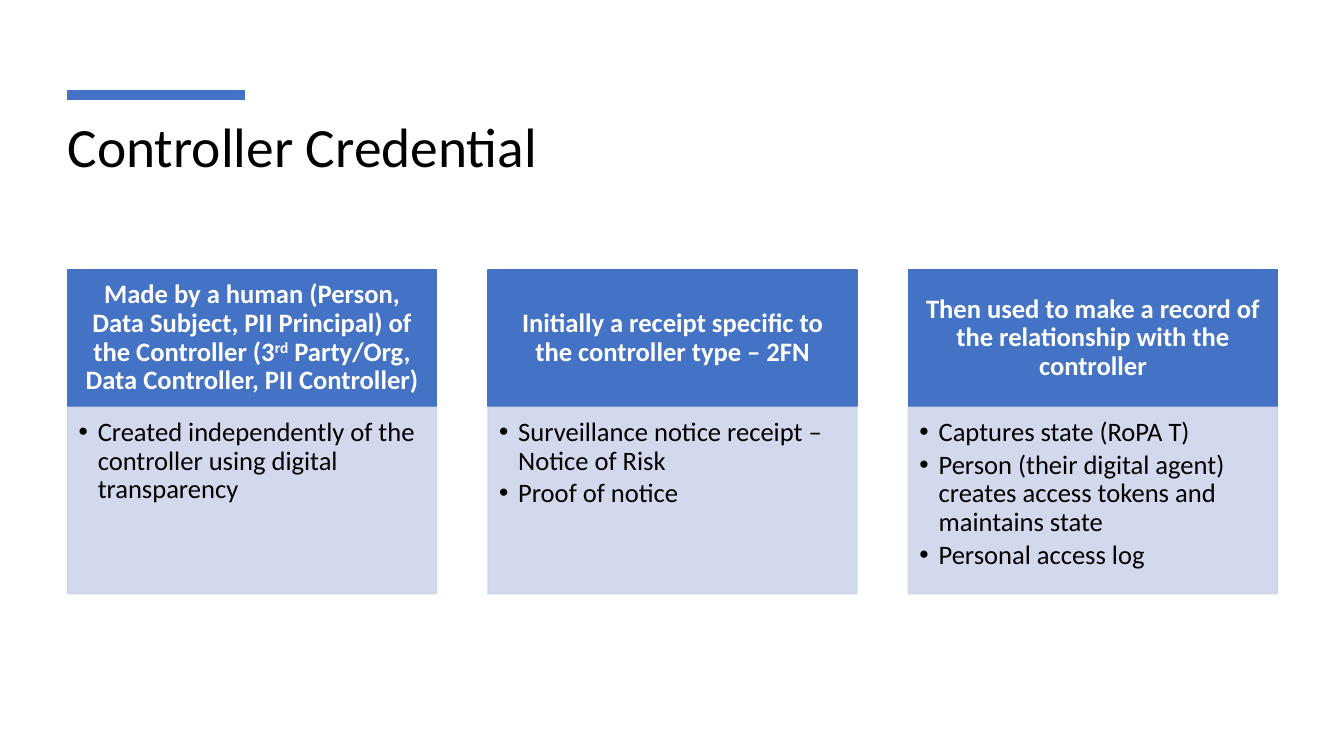
import dataclasses

import lxml.etree
import pptx
import pptx.dml.color
import pptx.enum.shapes
import pptx.enum.text
import pptx.oxml.ns
import pptx.util

PX = 9144  # EMU; 100 px to the inch
ANCHOR = pptx.enum.text.MSO_ANCHOR
ALIGN = pptx.enum.text.PP_ALIGN


@dataclasses.dataclass(frozen=True)
class Theme:
    font: str = "Calibri"
    accent: str = "4472C4"
    panel: str = "CFD5EA"
    panel_alpha: int = 90
    ink: str = "000000"
    paper: str = "FFFFFF"
    title_size: float = 39.6
    text_size: float = 19
    line_spacing: float = 0.9


@dataclasses.dataclass(frozen=True)
class Box:
    left: int
    top: int
    width: int
    height: int

    def emu(self) -> list[int]:
        return [px * PX for px in dataclasses.astuple(self)]


@dataclasses.dataclass(frozen=True)
class Card:
    heading: list[tuple[str, bool]]  # (text, superscript)
    points: list[str]


THEME = Theme()
ACCENT_BAR = Box(67, 90, 176, 9)
TITLE = Box(67, 119, 1200, 54)
FIRST_HEADING = Box(67, 268, 366, 135)
FIRST_PANEL = Box(67, 404, 366, 185)
CARD_STEP = 417
CARDS = [
    Card([("Made by a human (Person, Data Subject, PII Principal) of the Controller (3", False),
          ("rd", True),
          (" Party/Org, Data Controller, PII Controller)", False)],
         ["Created independently of the controller using digital transparency"]),
    Card([("Initially a receipt specific to the controller type – 2FN", False)],
         ["Surveillance notice receipt – Notice of Risk", "Proof of notice"]),
    Card([("Then used to make a record of the relationship with the controller", False)],
         ["Captures state (RoPA T)",
          "Person (their digital agent) creates access tokens and maintains state",
          "Personal access log"]),
]


def rgb(value: str):
    return pptx.dml.color.RGBColor.from_string(value)


def set_all(target, values: dict) -> None:
    for name, value in values.items():
        setattr(target, name, value)


def set_frame(frame, anchor, insets: tuple[int, int, int, int]) -> None:
    """Insets are left, top, right, bottom in px."""
    sides = ("margin_left", "margin_top", "margin_right", "margin_bottom")
    set_all(frame, {"word_wrap": True, "auto_size": pptx.enum.text.MSO_AUTO_SIZE.NONE,
                    "vertical_anchor": anchor,
                    **{side: px * PX for side, px in zip(sides, insets)}})


def add_run(paragraph, text: str, color: str, size: float, bold: bool = False):
    run = paragraph.add_run()
    run.text = text
    set_all(run.font, {"name": THEME.font, "size": pptx.util.Pt(size), "bold": bold})
    run.font.color.rgb = rgb(color)
    return run


def add_block(slide, box: Box, color: str, line_width: float, alpha: int = 100):
    block = slide.shapes.add_shape(pptx.enum.shapes.MSO_SHAPE.RECTANGLE, *box.emu())
    block.shadow.inherit = False
    block.fill.solid()
    block.fill.fore_color.rgb = rgb(color)
    block.line.color.rgb = rgb(color)
    block.line.width = pptx.util.Pt(line_width)
    if alpha < 100:
        for tint in block._element.spPr.iter(pptx.oxml.ns.qn("a:srgbClr")):
            opacity = lxml.etree.SubElement(tint, pptx.oxml.ns.qn("a:alpha"))
            opacity.set("val", str(alpha * 1000))
    return block


def add_bullet(paragraph, indent: int) -> None:
    properties = paragraph._p.get_or_add_pPr()
    properties.set("marL", str(indent * PX))
    properties.set("indent", str(-indent * PX))
    for tag, name, value in (("a:buFont", "typeface", "Arial"), ("a:buChar", "char", "•")):
        lxml.etree.SubElement(properties, pptx.oxml.ns.qn(tag)).set(name, value)


def add_title(slide, text: str) -> None:
    title = slide.shapes.title
    set_all(title, dict(zip(("left", "top", "width", "height"), TITLE.emu())))
    set_frame(title.text_frame, ANCHOR.TOP, (0, 0, 0, 0))
    paragraph = title.text_frame.paragraphs[0]
    set_all(paragraph, {"alignment": ALIGN.LEFT, "line_spacing": THEME.line_spacing})
    add_run(paragraph, text, THEME.ink, THEME.title_size)


def add_card(slide, card: Card, offset: int) -> None:
    heading_box, panel_box = (dataclasses.replace(box, left=box.left + offset)
                              for box in (FIRST_HEADING, FIRST_PANEL))

    heading = add_block(slide, heading_box, THEME.accent, 1).text_frame
    set_frame(heading, ANCHOR.MIDDLE, (15, 8, 15, 8))
    paragraph = heading.paragraphs[0]
    set_all(paragraph, {"alignment": ALIGN.CENTER, "line_spacing": THEME.line_spacing})
    for text, superscript in card.heading:
        run = add_run(paragraph, text, THEME.paper, THEME.text_size, bold=True)
        if superscript:
            run._r.get_or_add_rPr().set("baseline", "30000")

    panel = add_block(slide, panel_box, THEME.panel, 1, THEME.panel_alpha).text_frame
    set_frame(panel, ANCHOR.TOP, (11, 11, 15, 17))
    for index, point in enumerate(card.points):
        paragraph = panel.add_paragraph() if index else panel.paragraphs[0]
        set_all(paragraph, {"alignment": ALIGN.LEFT, "line_spacing": THEME.line_spacing,
                            "space_after": pptx.util.Pt(3), "level": 1})
        add_bullet(paragraph, 19)
        add_run(paragraph, point, THEME.ink, THEME.text_size)


def main() -> None:
    deck = pptx.Presentation()
    set_all(deck, {"slide_width": 1333 * PX, "slide_height": 750 * PX})
    slide = deck.slides.add_slide(deck.slide_layouts.get_by_name("Title Only"))
    add_block(slide, ACCENT_BAR, THEME.accent, 0.75)
    add_title(slide, "Controller Credential")
    for index, card in enumerate(CARDS):
        add_card(slide, card, index * CARD_STEP)
    deck.save("out.pptx")


if __name__ == "__main__":
    main()
